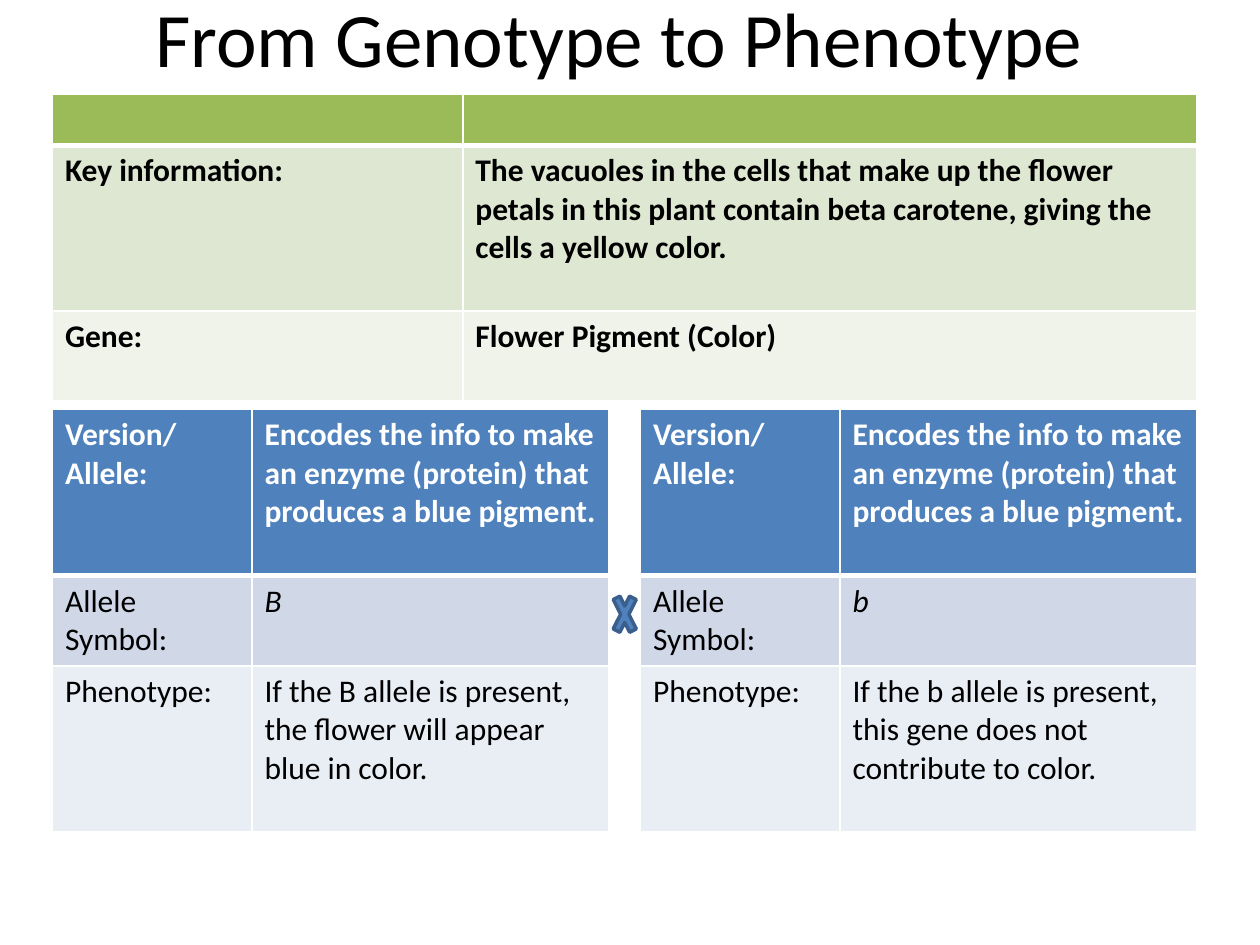
import lxml.etree
import pptx
import pptx.dml.color
import pptx.enum.shapes
import pptx.enum.text
import pptx.oxml.ns
import pptx.util

Pt = pptx.util.Pt
HUES = {
    "black": "000000", "white": "FFFFFF", "edge": "3A5F8C",
    "green": "9BBB59", "sage": "DEE7D1", "mint": "EFF3EA",
    "blue": "4F81BD", "sky": "D0D8E8", "mist": "E9EDF4",
}
BODY = {"name": "Calibri", "size": Pt(18), "bold": False, "italic": False}
BOLD = {**BODY, "bold": True}
SLANT = {**BODY, "italic": True}
HEAD = {**BODY, "size": Pt(44)}


def hue(name):
    """Return the named colour."""
    return pptx.dml.color.RGBColor.from_string(HUES[name])


def style(font, form, ink="black"):
    """Apply format values and a colour to a font."""
    for key, value in form.items():
        setattr(font, key, value)
    font.color.rgb = hue(ink)


def edge(cell, side, width):
    """Draw a white border on one side of a cell."""
    qn = pptx.oxml.ns.qn
    line = lxml.etree.SubElement(
        cell._tc.get_or_add_tcPr(), qn("a:ln" + side), w=str(Pt(width)))
    fill = lxml.etree.SubElement(line, qn("a:solidFill"))
    lxml.etree.SubElement(fill, qn("a:srgbClr"), val=HUES["white"])


def fill_cell(cell, text, form, ink, back, top, base):
    """Write, format, border and fill one cell."""
    cell.text = text
    for para in cell.text_frame.paragraphs:
        for run in para.runs:
            style(run.font, form, ink)
    for side, width in zip("LRTB", (1, 1, top, base)):
        edge(cell, side, width)
    cell.fill.solid()
    cell.fill.fore_color.rgb = hue(back)


def add_grid(slide, box, cols, rows):
    """Place a table whose rows are (height, fill, ink, cells)."""
    grid = slide.shapes.add_table(len(rows), len(cols), *map(Pt, box)).table
    for col, width in zip(grid.columns, cols):
        col.width = Pt(width)
    for r, (tall, back, ink, cells) in enumerate(rows):
        grid.rows[r].height = Pt(tall)
        for c, (text, form) in enumerate(cells):
            fill_cell(grid.cell(r, c), text, form, ink, back,
                      3 if r == 1 else 1, 3 if r == 0 else 1)


def add_title(slide, box):
    """Place and format the slide title."""
    title = slide.shapes.title
    title.left, title.top, title.width, title.height = map(Pt, box)
    frame = title.text_frame
    frame.text = "From Genotype to Phenotype"
    frame.vertical_anchor = pptx.enum.text.MSO_ANCHOR.MIDDLE
    para = frame.paragraphs[0]
    para.alignment = pptx.enum.text.PP_ALIGN.CENTER
    style(para.runs[0].font, HEAD)


def add_gene(slide, box):
    """Place the table of key information and gene."""
    fact = ("The vacuoles in the cells that make up the flower petals in this "
            "plant contain beta carotene, giving the cells a yellow color.")
    add_grid(slide, box, (234.5, box[2] - 234.5), (
        (29, "green", "white", (("", BOLD), ("", BOLD))),
        (94.5, "sage", "black", (("Key information:", BOLD), (fact, BOLD))),
        (51.5, "mint", "black",
         (("Gene:", BOLD), ("Flower Pigment (Color)", BOLD))),
    ))


def add_allele(slide, box, sign, trait):
    """Place the table that describes one allele."""
    role = ("Encodes the info to make an enzyme (protein) that produces "
            "a blue pigment.")
    add_grid(slide, box, (114, box[2] - 114), (
        (95, "blue", "white", (("Version/\nAllele:", BOLD), (role, BOLD))),
        (51.5, "sky", "black", (("Allele Symbol:", BODY), (sign, SLANT))),
        (95, "mist", "black", (
            ("Phenotype:", BODY),
            (f"If the {sign} allele is present, {trait}", BODY))),
    ))


def add_cross(slide, box):
    """Place the cross sign between the two alleles."""
    kind = pptx.enum.shapes.MSO_SHAPE.MATH_MULTIPLY
    cross = slide.shapes.add_shape(kind, *map(Pt, box))
    cross.shadow.inherit = False
    cross.fill.solid()
    cross.fill.fore_color.rgb = hue("blue")
    cross.line.color.rgb = hue("edge")
    cross.line.width = Pt(2)


def main():
    """Build and save the slide."""
    deck = pptx.Presentation()
    deck.slide_width, deck.slide_height = Pt(720), Pt(540)
    slide = deck.slides.add_slide(deck.slide_layouts[5])
    left, wide, half, top = 30, 654, 318, 234
    add_title(slide, (left, -24, 648, 90))
    add_gene(slide, (left, 54, wide, 175))
    traits = (("B", "the flower will appear blue in color."),
              ("b", "this gene does not contribute to color."))
    for i, (sign, trait) in enumerate(traits):
        spot = left + i * (wide - half)
        add_allele(slide, (spot, top, half, 241.5), sign, trait)
    add_cross(slide, (left + half, 333, wide - 2 * half, 36))
    deck.save("out.pptx")


if __name__ == "__main__":
    main()
